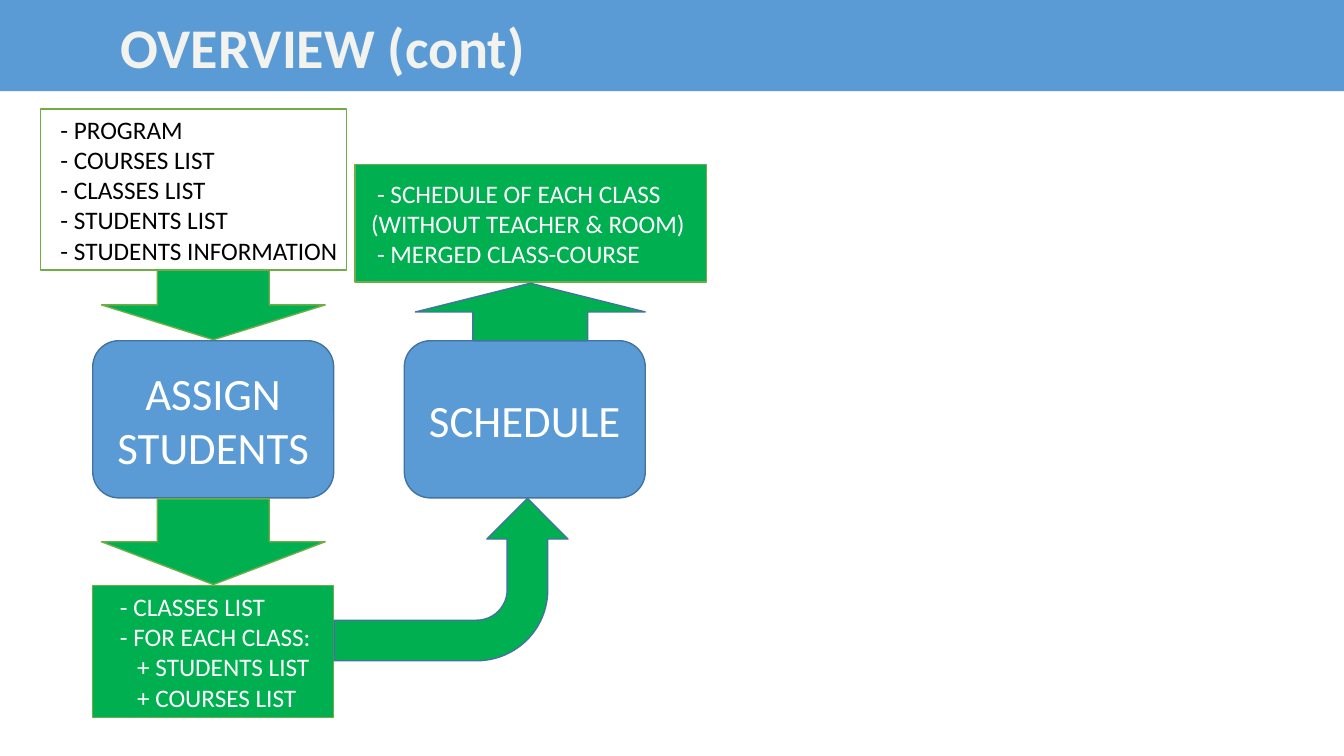
from dataclasses import dataclass

from pptx import Presentation
from pptx.dml.color import RGBColor
from pptx.enum.shapes import MSO_SHAPE as Form
from pptx.enum.text import MSO_ANCHOR as Anchor, MSO_AUTO_SIZE as AutoSize, PP_ALIGN as Align
from pptx.util import Inches, Pt

WIDTH, HEIGHT = Inches(13.33), Inches(7.5)
BLUE, GREEN, WHITE, BLACK = "5B9BD5", "00B050", "FFFFFF", "000000"
BLUE_EDGE, GREEN_EDGE, PALE = "43739E", "70AD47", "F2F2EF"
STEP_TOP, STEP_WIDTH, STEP_HEIGHT = 45.07, 17.93, 20.8
ASSIGN_LEFT, SCHEDULE_LEFT = 6.9, 30.08
DOWN_LEFT, DOWN_WIDTH = 7.55, 16.65


@dataclass(frozen=True)
class Area:
    """A rectangle in percent of the slide's width and height."""
    left: float
    top: float
    width: float
    height: float


@dataclass(frozen=True)
class Line:
    """One line of text and its indent in inches."""
    text: str
    indent: float = 0


@dataclass(frozen=True)
class Block:
    """A filled shape, with its text if it has any."""
    form: Form
    area: Area
    fill: str
    edge: str
    lines: tuple[Line, ...] = ()
    ink: str = WHITE
    size: int = 18
    align: Align = Align.LEFT
    inset: float = 0.1
    right_inset: float = 0
    turn: int = 0


BLOCKS = (
    Block(Form.RECTANGLE, Area(26.41, 21.73, 26.18, 15.6), GREEN, GREEN_EDGE, (
        Line("- SCHEDULE OF EACH CLASS", 0.06),
        Line("(WITHOUT TEACHER & ROOM)"),
        Line("- MERGED CLASS-COURSE", 0.06)), inset=0.16),
    Block(Form.RECTANGLE, Area(ASSIGN_LEFT, 77.47, STEP_WIDTH, 17.47), GREEN, GREEN_EDGE, (
        Line("- CLASSES LIST"),
        Line("- FOR EACH CLASS:"),
        Line("+ STUDENTS LIST", 0.17),
        Line("+ COURSES LIST", 0.17)), inset=0.27),
    Block(Form.RECTANGLE, Area(3, 14.4, 22.8, 21.33), WHITE, GREEN_EDGE, (
        Line("- PROGRAM"),
        Line("- COURSES LIST"),
        Line("- CLASSES LIST"),
        Line("- STUDENTS LIST"),
        Line("- STUDENTS INFORMATION")), ink=BLACK, inset=0.2),
    Block(Form.DOWN_ARROW, Area(DOWN_LEFT, 35.73, DOWN_WIDTH, 9.2), GREEN, GREEN_EDGE),
    *(Block(Form.ROUNDED_RECTANGLE, Area(left, STEP_TOP, STEP_WIDTH, STEP_HEIGHT), BLUE, BLUE_EDGE,
            (Line(label),), size=32, align=Align.CENTER, right_inset=0.1)
      for left, label in ((ASSIGN_LEFT, "ASSIGN STUDENTS"), (SCHEDULE_LEFT, "SCHEDULE"))),
    Block(Form.DOWN_ARROW, Area(DOWN_LEFT, 66, DOWN_WIDTH, 11.33), GREEN, GREEN_EDGE),
    Block(Form.UP_ARROW, Area(30.91, 37.47, 17.1, 7.6), GREEN, BLUE_EDGE),
    Block(Form.BENT_ARROW, Area(27.53, 61.2, 12.08, 30.93), GREEN, BLUE_EDGE, turn=90),
)


def paint(target, color: str) -> None:
    """Give a fill a solid colour."""
    target.solid()
    target.fore_color.rgb = RGBColor.from_string(color)


def place(area: Area) -> tuple[int, int, int, int]:
    """Turn an area into slide lengths."""
    return (round(WIDTH * area.left / 100), round(HEIGHT * area.top / 100),
            round(WIDTH * area.width / 100), round(HEIGHT * area.height / 100))


def style(para, size: int, color: str, align: Align, bold: bool = False) -> None:
    """Set a paragraph's font and alignment."""
    para.alignment = align
    para.font.name, para.font.size, para.font.bold = "Calibri", Pt(size), bold
    para.font.color.rgb = RGBColor.from_string(color)


def write(frame, block: Block) -> None:
    """Write a block's lines into its text frame."""
    frame.word_wrap = True
    frame.vertical_anchor = Anchor.MIDDLE
    frame.margin_left, frame.margin_right = Inches(block.inset), Inches(block.right_inset)
    for number, line in enumerate(block.lines):
        para = frame.add_paragraph() if number else frame.paragraphs[0]
        para.text = line.text
        style(para, block.size, block.ink, block.align)
        if line.indent:
            para._p.get_or_add_pPr().set("marL", str(Inches(line.indent)))


def draw(page, block: Block) -> None:
    """Add a block to the slide, mirrored when it is turned."""
    box = page.shapes.add_shape(block.form, *place(block.area))
    box.shadow.inherit = False
    paint(box.fill, block.fill)
    paint(box.line.fill, block.edge)
    box.line.width = Pt(1)
    if block.turn:
        box.rotation = block.turn
        box._element.spPr.xfrm.set("flipH", "1")
    if block.lines:
        write(box.text_frame, block)


def add_heading(page, text: str) -> None:
    """Make the title a coloured band across the top."""
    title = page.shapes.title
    title.left, title.top, title.width, title.height = place(Area(0, 0, 100, 12.07))
    paint(title.fill, BLUE)
    frame = title.text_frame
    frame.text = text
    frame.auto_size = AutoSize.NONE
    frame.vertical_anchor = Anchor.MIDDLE
    frame.margin_left = round(WIDTH * 0.09)
    style(frame.paragraphs[0], 40, PALE, Align.LEFT, bold=True)


def main() -> None:
    """Build the slide and save it."""
    deck = Presentation()
    deck.slide_width, deck.slide_height = WIDTH, HEIGHT
    page = deck.slides.add_slide(deck.slide_layouts[5])
    add_heading(page, "OVERVIEW (cont)")
    for block in BLOCKS:
        draw(page, block)
    deck.save("out.pptx")


if __name__ == "__main__":
    main()
